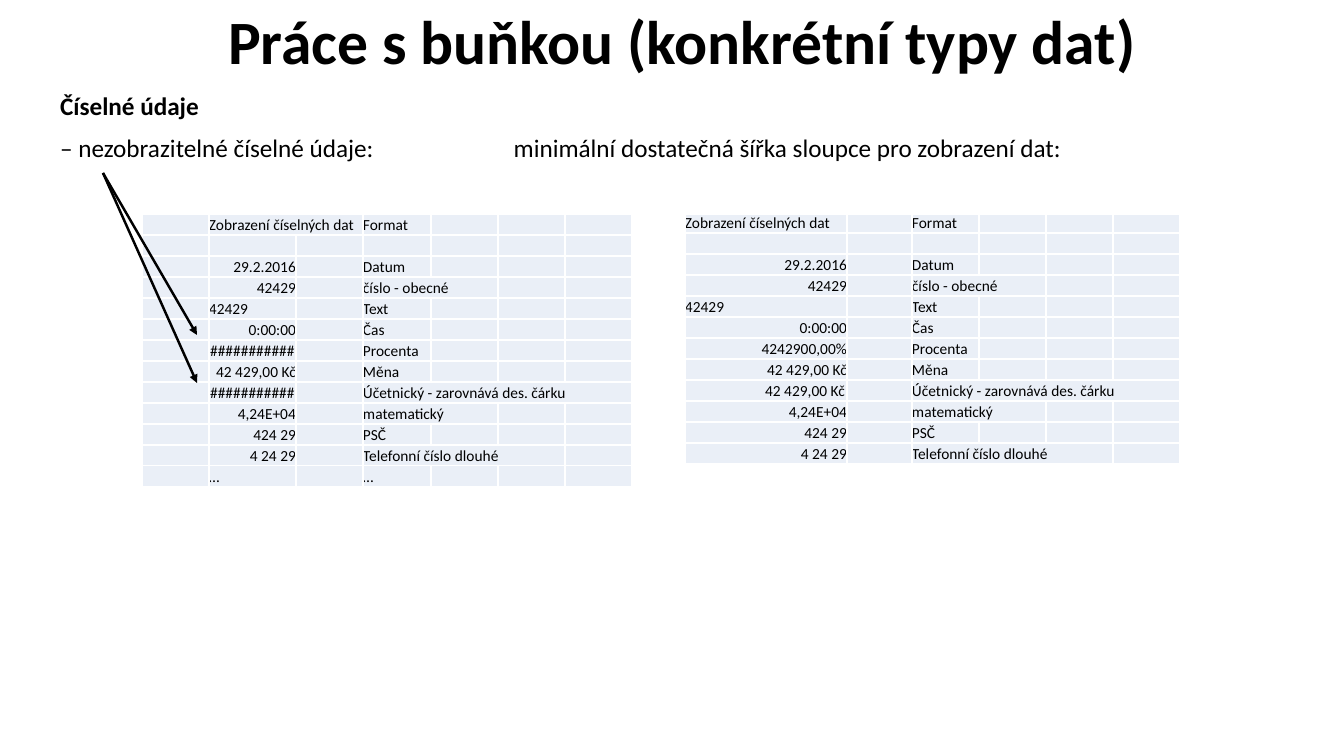
from pptx import Presentation
from pptx.dml.color import RGBColor
from pptx.enum.shapes import MSO_CONNECTOR
from pptx.enum.text import MSO_ANCHOR, MSO_AUTO_SIZE, PP_ALIGN
from pptx.oxml.ns import qn
from pptx.util import Pt
from lxml.etree import SubElement

LEFT, CENTER, RIGHT = PP_ALIGN.LEFT, PP_ALIGN.CENTER, PP_ALIGN.RIGHT
MIDDLE, BOTTOM = MSO_ANCHOR.MIDDLE, MSO_ANCHOR.BOTTOM
NO_FIT = MSO_AUTO_SIZE.NONE
STRAIGHT = MSO_CONNECTOR.STRAIGHT
EMU_PER_PX = 914400 / 100.8

HEADING = ("Zobrazení číselných dat", LEFT)
# value shown in a narrow column, value shown in a wide one, alignment, format, columns spanned
FORMATS = [
    ("29.2.2016", "29.2.2016", RIGHT, "Datum", 1),
    ("42429", "42429", RIGHT, "číslo - obecné", 2),
    ("42429", "42429", LEFT, "Text", 1),
    ("0:00:00", "0:00:00", RIGHT, "Čas", 1),
    ("###########", "4242900,00%", RIGHT, "Procenta", 1),
    ("42 429,00 Kč", "42 429,00 Kč", RIGHT, "Měna", 1),
    ("###########", "42 429,00 Kč", RIGHT, "Účetnický - zarovnává des. čárku", 4),
    ("4,24E+04", "4,24E+04", RIGHT, "matematický", 2),
    ("424 29", "424 29", RIGHT, "PSČ", 1),
    ("4 24 29", "4 24 29", RIGHT, "Telefonní číslo dlouhé", 3),
]


def px(length):
    return round(length * EMU_PER_PX)


def rgb(color):
    return RGBColor.from_string(color)


class SlideBuilder:
    font, ink, cell_fill, border = "Calibri", "000000", "EAEFF7", "FFFFFF"

    def __init__(self, deck):
        self.slide = deck.slides.add_slide(deck.slide_layouts[1])

    def style(self, para, size, bold=False, align=LEFT):
        para.alignment = align
        para.font.name = self.font
        para.font.size = Pt(size)
        para.font.bold = bold
        para.font.color.rgb = rgb(self.ink)

    def place(self, box, left, top, width, height):
        box.left, box.top, box.width, box.height = map(px, (left, top, width, height))
        box.text_frame.word_wrap = True
        box.text_frame.auto_size = NO_FIT

    def title(self, text, *bounds):
        box = self.slide.shapes.title
        self.place(box, *bounds)
        box.text_frame.vertical_anchor = MIDDLE
        box.text_frame.text = text
        para = box.text_frame.paragraphs[0]
        para.line_spacing = 0.9
        self.style(para, 44, True, CENTER)

    def body(self, lines, *bounds):
        """Fill the body with unbulleted (text, bold) lines."""
        box = self.slide.placeholders[1]
        self.place(box, *bounds)
        box.text_frame.text = "\n".join(text for text, _ in lines)
        for para, (_, bold) in zip(box.text_frame.paragraphs, lines):
            para.line_spacing = 0.9
            para.space_before = Pt(10)
            self.style(para, 18, bold)
            properties = para._p.get_or_add_pPr()
            properties.set("marL", "0")
            properties.set("indent", "0")
            properties.insert_element_before(
                properties.makeelement(qn("a:buNone"), {}), "a:tabLst", "a:defRPr")

    def arrow(self, start, end):
        line = self.slide.shapes.add_connector(STRAIGHT, *map(px, (*start, *end)))
        line.line.color.rgb = rgb(self.ink)
        line.line.width = Pt(1.75)
        SubElement(line.line._get_or_add_ln(), qn("a:tailEnd"), type="triangle")
        SubElement(line._element.spPr, qn("a:effectLst"))

    def cell(self, cell, text="", align=LEFT):
        cell.margin_left = cell.margin_right = cell.margin_top = cell.margin_bottom = 0
        cell.vertical_anchor = BOTTOM
        cell.text = text
        para = cell.text_frame.paragraphs[0]
        self.style(para, 11, align=align)
        if not text:
            para._p.get_or_add_endParaRPr().set("sz", "1100")
        properties = cell._tc.get_or_add_tcPr()
        for side in ("a:lnL", "a:lnR", "a:lnT", "a:lnB"):
            edge = SubElement(properties, qn(side), w=str(Pt(1)))
            fill = SubElement(edge, qn("a:solidFill"))
            SubElement(fill, qn("a:srgbClr"), val=self.border)
        cell.fill.solid()
        cell.fill.fore_color.rgb = rgb(self.cell_fill)

    def table(self, left, top, widths, heights, rows, value_column):
        """Draw rows of (value, alignment, value span, format, format span)."""
        table = self.slide.shapes.add_table(
            len(heights), len(widths), px(left), px(top), px(sum(widths)), px(sum(heights))).table
        table.first_row = table.horz_banding = False
        for column, width in zip(table.columns, widths):
            column.width = px(width)
        for row, height in zip(table.rows, heights):
            row.height = px(height)
        for index, (value, align, value_span, kind, kind_span) in enumerate(rows):
            kind_column = value_column + 2
            texts = {value_column: (value, align), kind_column: (kind, LEFT)}
            for column in range(len(widths)):
                self.cell(table.cell(index, column), *texts.get(column, ()))
            for column, span in ((value_column, value_span), (kind_column, kind_span)):
                if span > 1:
                    table.cell(index, column).merge(table.cell(index, column + span - 1))
        return table


def format_rows(wide):
    """List the heading, a gap and every format for the narrow or the wide column."""
    rows = [(*HEADING, 1 if wide else 2, "Format", 1), ("", LEFT, 1, "", 1)]
    for narrow_value, wide_value, align, kind, span in FORMATS:
        value = wide_value if wide else narrow_value
        rows.append((value, CENTER if value.startswith("#") else align, 1, kind, span))
    return rows


def main():
    deck = Presentation()
    deck.slide_width, deck.slide_height = px(1344), px(756)
    page = SlideBuilder(deck)
    page.title("Práce s buňkou (konkrétní typy dat)", 103, 0, 1159, 89)
    page.body([
        ("Číselné údaje", True),
        ("– nezobrazitelné číselné údaje:\t\t\tminimální dostatečná šířka sloupce pro zobrazení dat:", False),
    ], 50, 89, 1251, 546)

    narrow_rows = format_rows(False) + [("…", LEFT, 1, "…", 1)]
    page.table(142, 214, [67, 87, 67, 68, 67, 67, 67], [21] * 13, narrow_rows, 1)
    for target in (335, 383):
        page.arrow((103, 173), (197, target))
    wide_table = page.table(685, 214, [162, 65, 67, 67, 67, 67], [19] + [21] * 11, format_rows(True), 0)
    wide_table.cell(8, 0).margin_right = px(2)
    deck.save("out.pptx")


if __name__ == "__main__":
    main()
